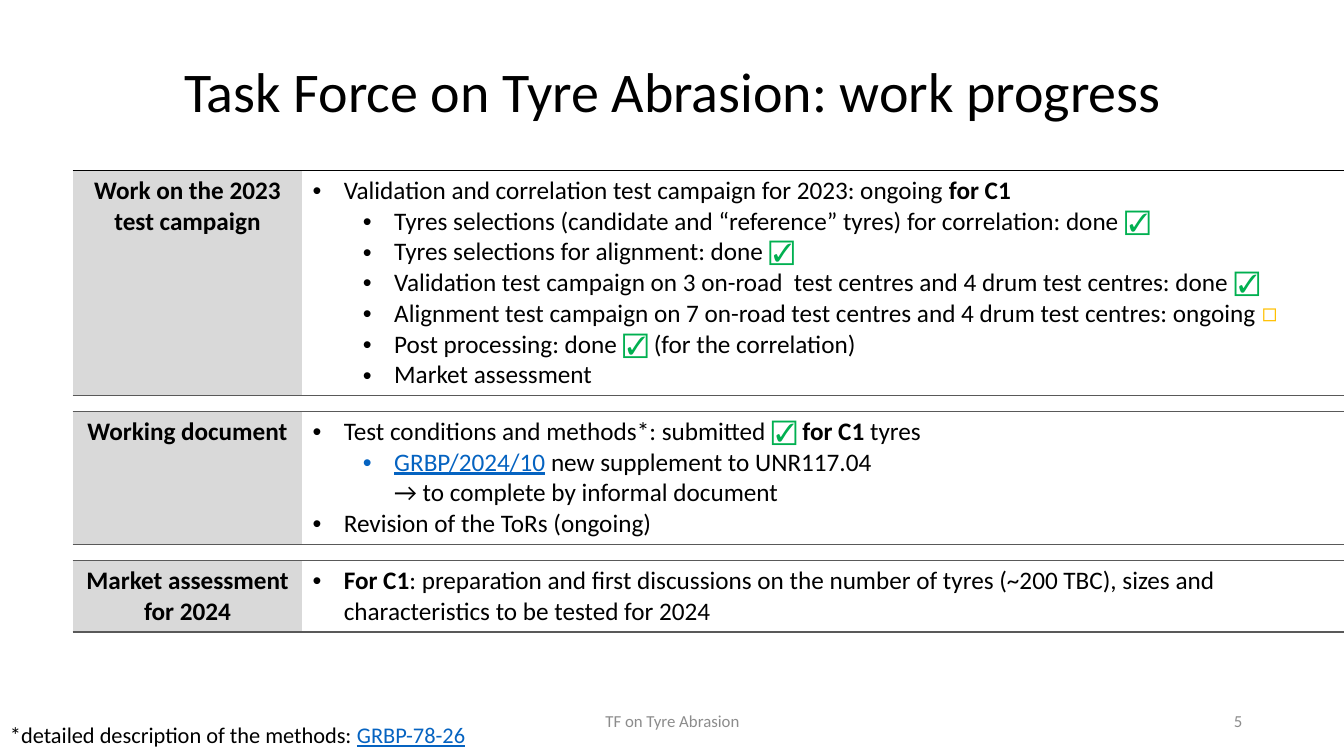
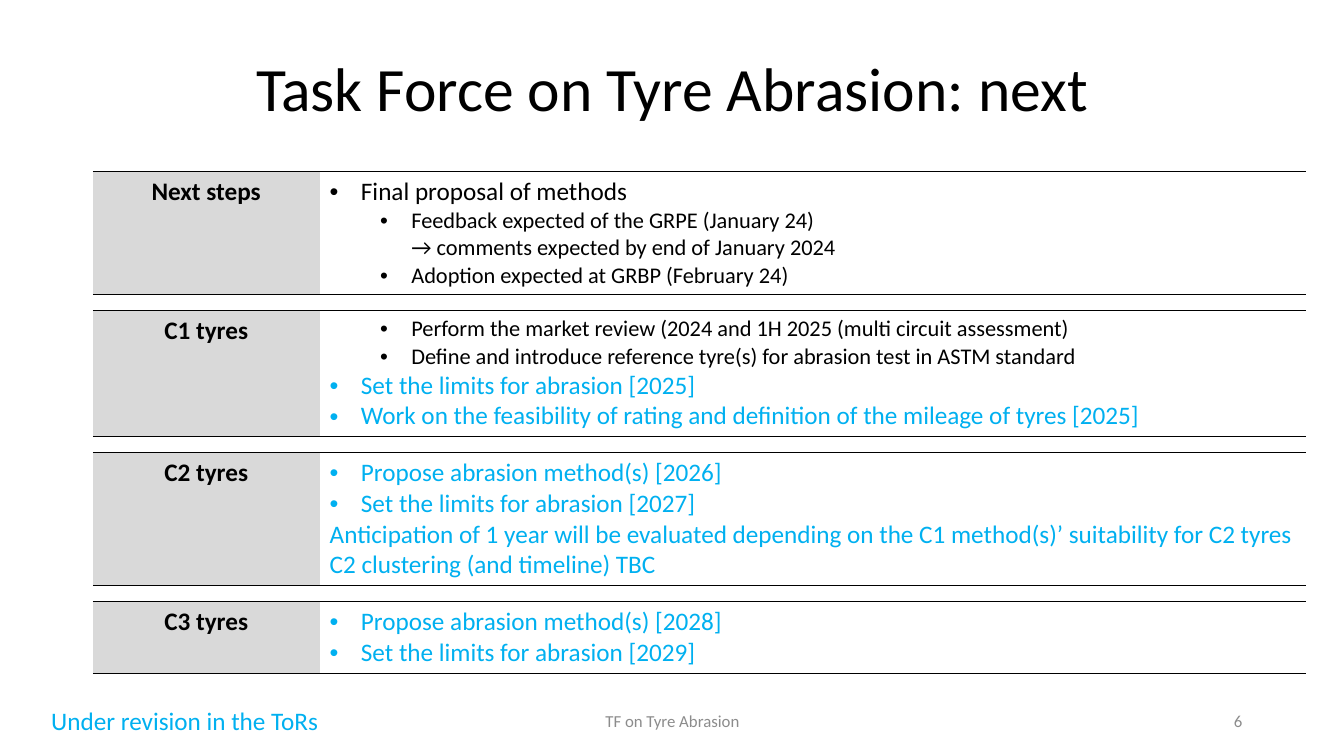
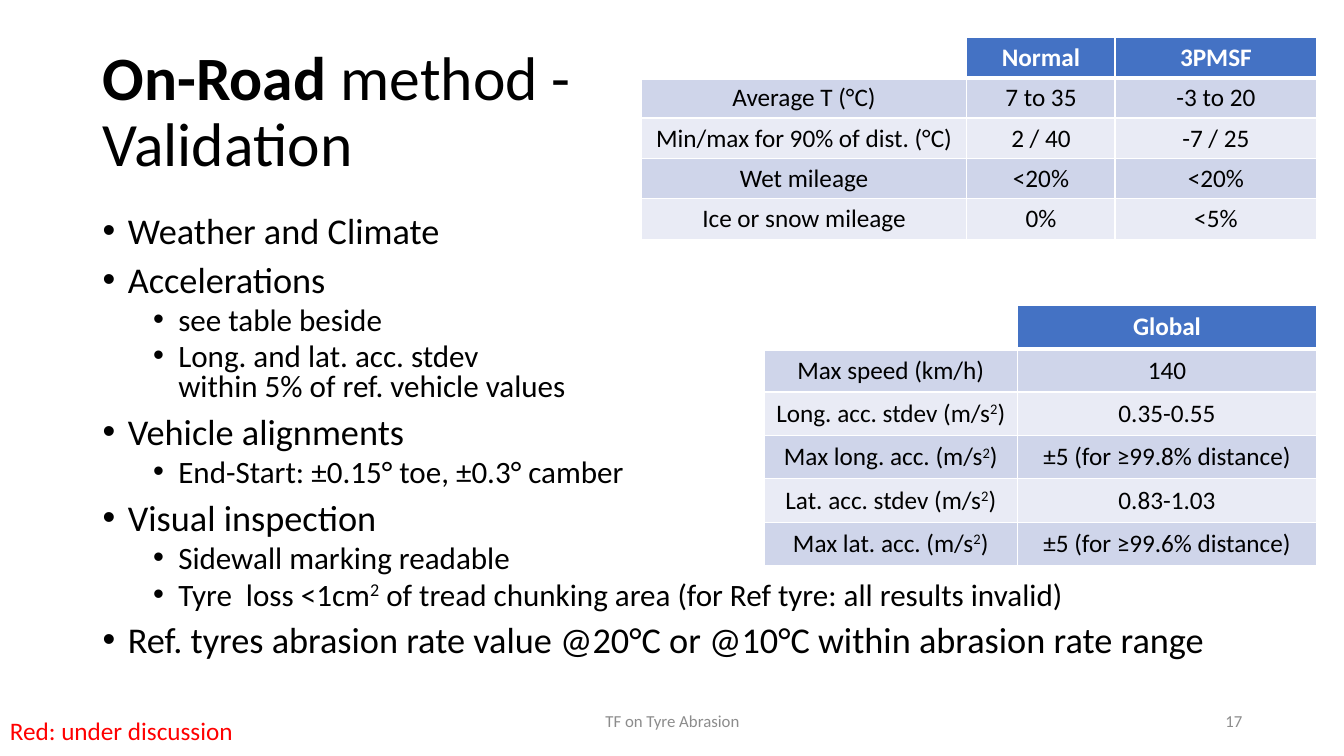
from lxml.etree import SubElement
from pptx import Presentation
from pptx.dml.color import RGBColor
from pptx.enum.text import MSO_ANCHOR, PP_ALIGN
from pptx.oxml.ns import qn
from pptx.util import Inches, Pt

FONT = "Calibri"
COLORS = {
    "text": "000000", "footer": "8C8C8C", "label": "D9D9D9", "link": "0563C1",
    "done": "00B050", "ongoing": "FFC000", "revision": "00B0F0",
    "discussion": "FF0000", "white": "FFFFFF", "rule": "595959",
    "header": "4472C4", "odd": "CFD5EA", "even": "E9EBF5",
}
NO_STYLE = "{2D5ABB26-0587-4C30-8999-92F81FD0307C}"
SPACER = 0.16
LINE = 1.22 / 72  # inches of line height per point of text

# Run formats
BOLD = {"bold": True}
LINK = {"color": "link", "underline": True}
SUPER = {"baseline": 30}
SMALL = {"size": 16}
REVISED = {"color": "revision"}
DONE = ("☑", {"color": "done"})
SQUARE = ("2", SUPER)

# Content: a paragraph is (bullet level or None, run, run, ...)
PROGRESS = [
    ("Work on the 2023 test campaign", [
        (0, "Validation and correlation test campaign for 2023: ongoing ", ("for C1", BOLD)),
        (1, "Tyres selections (candidate and “reference” tyres) for correlation: done ", DONE),
        (1, "Tyres selections for alignment: done ", DONE),
        (1, "Validation test campaign on 3 on-road  test centres and 4 drum test centres: done ", DONE),
        (1, "Alignment test campaign on 7 on-road test centres and 4 drum test centres: ongoing ",
         ("◻", {"color": "ongoing"})),
        (1, "Post processing: done ", DONE, " (for the correlation)"),
        (1, "Market assessment"),
    ], 7),
    ("Working document", [
        (0, "Test conditions and methods*: submitted ", DONE, (" for C1 ", BOLD), "tyres"),
        (1, ("GRBP/2024/10", LINK),
         " new supplement to UNR117.04\n→ to complete by informal document"),
        (0, "Revision of the ToRs (ongoing)"),
    ], 4),
    ("Market assessment for 2024", [
        (0, ("For C1", BOLD), ": preparation and first discussions on the number of tyres "
         "(~200 TBC), sizes and characteristics to be tested for 2024"),
    ], 2),
]
NEXT = [
    ("Next steps", [
        (0, "Final proposal of methods"),
        (1, ("Feedback expected of the GRPE (January 24)\n"
             "→ comments expected by end of January 2024", SMALL)),
        (1, ("Adoption expected at GRBP (February 24)", SMALL)),
    ], 3.67),
    ("C1 tyres", [
        (1, ("Perform the market review (2024 and 1H 2025 (multi circuit assessment)", SMALL)),
        (1, ("Define and introduce reference tyre(s) for abrasion test in ASTM standard", SMALL)),
        (0, ("Set the limits for abrasion [2025]", REVISED)),
        (0, ("Work on the feasibility of rating and definition of the mileage of tyres [2025]", REVISED)),
    ], 3.78),
    ("C2 tyres", [
        (0, ("Propose abrasion method(s) [2026]", REVISED)),
        (0, ("Set the limits for abrasion [2027]", REVISED)),
        (None, ("Anticipation of 1 year will be evaluated depending on the C1 method(s)’ "
                "suitability for C2 tyres", REVISED)),
        (None, ("C2 clustering (and timeline) TBC", REVISED)),
    ], 4),
    ("C3 tyres", [
        (0, ("Propose abrasion method(s) [2028]", REVISED)),
        (0, ("Set the limits for abrasion [2029]", REVISED)),
    ], 2),
]
VALIDATION = [
    (0, "Weather and Climate"),
    (0, "Accelerations"),
    (1, "see table beside"),
    (1, "Long. and lat. acc. stdev\nwithin 5% of ref. vehicle values"),
    (0, "Vehicle alignments"),
    (1, "End-Start: ±0.15° toe, ±0.3° camber"),
    (0, "Visual inspection"),
    (1, "Sidewall marking readable"),
    (1, "Tyre  loss <1cm", SQUARE, " of tread chunking area (for Ref tyre: all results invalid)"),
    (0, "Ref. tyres abrasion rate value @20°C or @10°C within abrasion rate range"),
]
ACCELERATION = [
    ["", "Global"],
    ["Max speed (km/h)", "140"],
    [("Long. acc. stdev (m/s", SQUARE, ")"), "0.35-0.55"],
    [("Max long. acc. (m/s", SQUARE, ")"), "±5 (for ≥99.8% distance)"],
    [("Lat. acc. stdev (m/s", SQUARE, ")"), "0.83-1.03"],
    [("Max lat. acc. (m/s", SQUARE, ")"), "±5 (for ≥99.6% distance)"],
]
CLIMATE = [
    ["", "Normal", "3PMSF"],
    ["Average T (°C)", "7 to 35", "-3 to 20"],
    ["Min/max for 90% of dist. (°C)", "2 / 40", "-7 / 25"],
    ["Wet mileage", "<20%", "<20%"],
    ["Ice or snow mileage", "0%", "<5%"],
]


def rgb(name):
    return RGBColor.from_string(COLORS[name])


def write(frame, paragraphs, size=18, color="text", bold=False, align=PP_ALIGN.LEFT,
          hang=0.31, line_spacing=None, level_sizes=None, level_spaces=None):
    """Fill a text frame with (level, run, ...) paragraphs."""
    for index, (level, *runs) in enumerate(paragraphs):
        paragraph = frame.paragraphs[0] if index == 0 else frame.add_paragraph()
        paragraph.alignment = align
        if level is not None:
            paragraph.level = level
            properties = paragraph._p.get_or_add_pPr()
            properties.set("marL", str(Inches(hang + 0.5 * level)))
            properties.set("indent", str(-Inches(hang)))
            SubElement(properties, qn("a:buFont"), typeface="Arial")
            SubElement(properties, qn("a:buChar"), char="•")
        if line_spacing:
            paragraph.line_spacing = line_spacing
        if level_spaces and index:
            paragraph.space_before = Pt(level_spaces[level])
        base = {"size": level_sizes[level] if level_sizes else size, "color": color, "bold": bold}
        for item in runs:
            text, extra = (item, {}) if isinstance(item, str) else item
            style = {**base, **extra}
            for number, part in enumerate(text.split("\n")):
                if number:
                    paragraph.add_line_break()
                run = paragraph.add_run()
                run.text = part
                run.font.name = FONT
                run.font.size = Pt(style["size"])
                run.font.bold = style["bold"]
                run.font.color.rgb = rgb(style["color"])
                if style.get("underline"):
                    run.font.underline = True
                if "baseline" in style:
                    run._r.get_or_add_rPr().set("baseline", str(style["baseline"] * 1000))


def add_text(slide, box, paragraphs, anchor=MSO_ANCHOR.TOP, wrap=True, **style):
    frame = slide.shapes.add_textbox(*map(Inches, box)).text_frame
    frame.word_wrap = wrap
    frame.vertical_anchor = anchor
    write(frame, paragraphs, **style)


def add_title(slide, box, *runs, size=44, align=PP_ALIGN.CENTER):
    add_text(slide, box, [(None, *runs)], MSO_ANCHOR.MIDDLE,
             size=size, align=align, line_spacing=0.9)


def add_footer(slide, number):
    for box, text, align in (((4.42, 6.95, 4.5, 0.4), "TF on Tyre Abrasion", PP_ALIGN.CENTER),
                             ((9.42, 6.95, 3, 0.4), str(number), PP_ALIGN.RIGHT)):
        add_text(slide, box, [(None, text)], MSO_ANCHOR.MIDDLE,
                 size=12, color="footer", align=align)


def add_plain_table(slide, left, top, columns, heights):
    """Add a table without a style, sized by its columns and rows."""
    box = map(Inches, (left, top, sum(columns), sum(heights)))
    table = slide.shapes.add_table(len(heights), len(columns), *box).table
    table._tbl.tblPr.find(qn("a:tableStyleId")).text = NO_STYLE
    table.first_row = table.horz_banding = False
    for column, width in zip(table.columns, columns):
        column.width = Inches(width)
    for row, height in zip(table.rows, heights):
        row.height = Inches(height)
    return table


def set_cell(cell, fill=None, **borders):
    """Set borders given as L, R, T, B = (colour, points), then the fill."""
    properties = cell._tc.get_or_add_tcPr()
    for side in "LRTB":
        if side in borders:
            color, width = borders[side]
            line = SubElement(properties, qn("a:ln" + side), w=str(Pt(width)))
            solid = SubElement(line, qn("a:solidFill"))
            SubElement(solid, qn("a:srgbClr"), val=COLORS[color])
    if fill:
        cell.fill.solid()
        cell.fill.fore_color.rgb = rgb(fill)
    else:
        cell.fill.background()


def shrink_empty(cell):
    cell.margin_top = cell.margin_bottom = 0
    SubElement(cell.text_frame.paragraphs[0]._p, qn("a:endParaRPr"), sz="400")


def add_topic_table(slide, left, top, columns, topics, rule):
    """Topics in ruled rows, with narrow empty rows between them."""
    heights = []
    for _, _, lines in topics:
        heights += [round(lines * 18 * LINE + 0.1, 2), SPACER]
    table = add_plain_table(slide, left, top, columns, heights[:-1])
    for row in range(len(table.rows)):
        label, details = table.cell(row, 0), table.cell(row, 1)
        if row % 2:
            for cell in (label, details):
                set_cell(cell, T=(rule, 1))
                shrink_empty(cell)
            continue
        heading, paragraphs, _ = topics[row // 2]
        borders = {"B": (rule, 1)}
        if row == 0:
            borders["T"] = ("text", 1)
        set_cell(label, "label", **borders)
        set_cell(details, **borders)
        write(label.text_frame, [(None, heading)], bold=True, align=PP_ALIGN.CENTER)
        write(details.text_frame, paragraphs)


def add_value_table(slide, left, top, columns, height, rows):
    """Banded grid with a header row and an empty corner."""
    table = add_plain_table(slide, left, top, columns, [height] * len(rows))
    for row, values in enumerate(rows):
        for column, value in enumerate(values):
            cell = table.cell(row, column)
            fill = ("odd" if row % 2 else "even") if row else ("header" if value else None)
            set_cell(cell, fill, L=("white", 1), R=("white", 1),
                     T=("white", 3 if row == 1 else 1), B=("white", 1 if row else 3))
            cell.vertical_anchor = MSO_ANCHOR.MIDDLE
            if value:
                runs = (value,) if isinstance(value, str) else value
                write(cell.text_frame, [(None, *runs)], align=PP_ALIGN.CENTER,
                      bold=row == 0, color="text" if row else "white")


def main():
    presentation = Presentation()
    presentation.slide_width, presentation.slide_height = Inches(13.33), Inches(7.5)
    slides = []
    for number in (5, 6, 17):
        slide = presentation.slides.add_slide(presentation.slide_layouts[6])
        add_footer(slide, number)
        slides.append(slide)
    progress, upcoming, validation = slides

    # Work progress
    add_title(progress, (0.92, 0.21, 11.5, 1.45),
              "Task Force on Tyre Abrasion: work progress", size=40)
    add_topic_table(progress, 0.72, 1.69, (2.28, 10.33), PROGRESS, "rule")
    add_text(progress, (0, 7.11, 6.08, 0.37),
             [(None, "*detailed description of the methods: ", ("GRBP-78-26", LINK))], size=16)

    # Next steps
    add_title(upcoming, (0.92, 0.4, 11.5, 1.01), "Task Force on Tyre Abrasion: next")
    add_topic_table(upcoming, 0.92, 1.7, (2.25, 9.78), NEXT, "text")
    add_text(upcoming, (0.41, 6.95, 2.88, 0.4), [(None, "Under revision in the ToRs")],
             wrap=False, color="revision")

    # On-road validation
    add_title(validation, (0.92, 0.4, 5.19, 1.45), ("On-Road", BOLD), " method - Validation",
              align=PP_ALIGN.LEFT)
    add_text(validation, (0.92, 2.1, 12.14, 4.57), VALIDATION, hang=0.25, line_spacing=0.8,
             level_sizes=(25.9, 22.2), level_spaces=(10, 5))
    add_value_table(validation, 7.58, 3.03, (2.51, 2.97), 0.43, ACCELERATION)
    add_value_table(validation, 6.36, 0.37, (3.23, 1.47, 2), 0.4, CLIMATE)
    add_text(validation, (0, 7.05, 2.44, 0.4), [(None, "Red: under discussion")],
             wrap=False, color="discussion")

    presentation.save("out.pptx")


if __name__ == "__main__":
    main()
